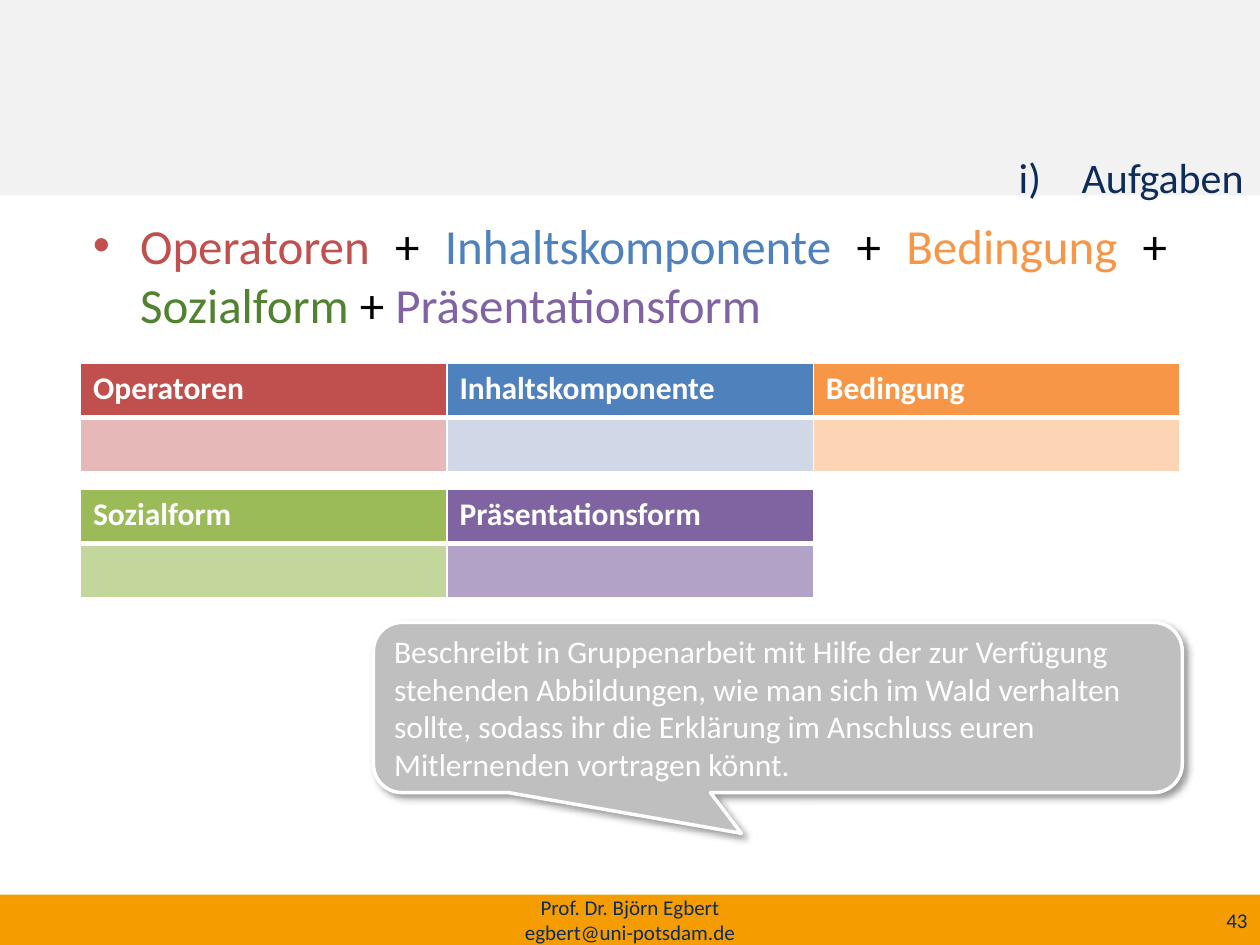
from dataclasses import dataclass

from lxml import etree
from pptx import Presentation
from pptx.dml.color import RGBColor
from pptx.enum import shapes, text
from pptx.oxml import ns
from pptx.util import Pt


@dataclass(frozen=True)
class Theme:
    font: str = "Calibri"
    navy: str = "0D2C5A"
    white: str = "FFFFFF"
    black: str = "000000"
    band: str = "F2F2F2"
    footer: str = "F59C00"
    callout: str = "BFBFBF"
    red: str = "C0504D"
    blue: str = "4F81BD"
    orange: str = "F79646"
    green: str = "9BBB59"
    dark_green: str = "51822F"
    purple: str = "8064A2"
    light_red: str = "E6B9B8"
    light_blue: str = "D0D8E8"
    light_orange: str = "FCD5B5"
    light_green: str = "C3D69B"
    light_purple: str = "B3A2C7"
    formula_size: int = 28
    title_size: int = 24
    text_size: int = 18
    footer_size: int = 12


THEME = Theme()
COLUMN_WIDTH = 209.4
ROW_HEIGHT = 31.2


def add_element(parent, tag, **attributes):
    element = etree.SubElement(parent, ns.qn(tag))
    for name, value in attributes.items():
        element.set(name, str(value))
    return element


def format_run(run, size, color, bold=False):
    run.font.name = THEME.font
    run.font.size = Pt(size)
    run.font.bold = bold
    run.font.color.rgb = RGBColor.from_string(color)


def fill_solid(item, color):
    item.fill.solid()
    item.fill.fore_color.rgb = RGBColor.from_string(color)


def add_text(slide, box, anchor=text.MSO_ANCHOR.TOP):
    frame = slide.shapes.add_textbox(*map(Pt, box)).text_frame
    frame.word_wrap = True
    frame.vertical_anchor = anchor
    return frame


def add_label(slide, box, words, alignment):
    paragraph = add_text(slide, box, text.MSO_ANCHOR.MIDDLE).paragraphs[0]
    paragraph.text = words
    paragraph.alignment = alignment
    for run in paragraph.runs:
        format_run(run, THEME.footer_size, THEME.navy)


def add_band(slide, box, color):
    shape = slide.shapes.add_shape(shapes.MSO_SHAPE.RECTANGLE, *map(Pt, box))
    shape.shadow.inherit = False
    fill_solid(shape, color)
    shape.line.fill.background()


def set_hanging_indent(paragraph, indent):
    properties = paragraph._p.get_or_add_pPr()
    properties.set("marL", str(Pt(indent)))
    properties.set("indent", str(-Pt(indent)))
    return properties


def add_title(slide, box, words):
    paragraph = add_text(slide, box).paragraphs[0]
    paragraph.text = words
    paragraph.alignment = text.PP_ALIGN.RIGHT
    properties = set_hanging_indent(paragraph, 36)
    add_element(properties, "a:buFont", typeface="+mj-lt")
    add_element(properties, "a:buAutoNum", type="alphaLcParenR", startAt=9)
    format_run(paragraph.runs[0], THEME.title_size, THEME.navy)


def add_formula(slide, box, terms):
    paragraph = add_text(slide, box).paragraphs[0]
    paragraph.alignment = text.PP_ALIGN.JUSTIFY
    properties = set_hanging_indent(paragraph, 27)
    add_element(properties, "a:buFont", typeface="Arial")
    add_element(properties, "a:buChar", char="•")
    for index, (term, color) in enumerate(terms):
        pieces = [(term, color)] if index == 0 else [(" + ", THEME.black), (term, color)]
        for words, piece_color in pieces:
            run = paragraph.add_run()
            run.text = words
            format_run(run, THEME.formula_size, piece_color)


def set_borders(cell, top, bottom):
    properties = cell._tc.get_or_add_tcPr()
    for side, width in (("L", 1), ("R", 1), ("T", top), ("B", bottom)):
        line = add_element(properties, f"a:ln{side}", w=Pt(width))
        add_element(add_element(line, "a:solidFill"), "a:srgbClr", val=THEME.white)


def add_component_table(slide, left, top, components):
    count = len(components)
    size = (COLUMN_WIDTH * count, ROW_HEIGHT * 2)
    table = slide.shapes.add_table(2, count, *map(Pt, (left, top, *size))).table
    for row in table.rows:
        row.height = Pt(ROW_HEIGHT)
    for index, (name, color, light_color) in enumerate(components):
        table.columns[index].width = Pt(COLUMN_WIDTH)
        header, body = table.cell(0, index), table.cell(1, index)
        set_borders(header, 1, 3)
        set_borders(body, 3, 1)
        fill_solid(header, color)
        fill_solid(body, light_color)
        header.text_frame.text = name
        format_run(header.text_frame.paragraphs[0].runs[0], THEME.text_size, THEME.white, True)


def add_callout(slide, box, words):
    shape = slide.shapes.add_shape(
        shapes.MSO_SHAPE.ROUNDED_RECTANGULAR_CALLOUT, *map(Pt, box))
    for index, value in enumerate((-0.045, 0.74, 0.167)):
        shape.adjustments[index] = value
    fill_solid(shape, THEME.callout)
    shape.line.color.rgb = RGBColor.from_string(THEME.white)
    shape.line.width = Pt(2)
    shape.shadow.inherit = False
    effects = shape._element.spPr.find(ns.qn("a:effectLst"))
    shadow = add_element(effects, "a:outerShdw", blurRad=Pt(4), dist=Pt(3),
                         dir=45 * 60000, algn="tl", rotWithShape=0)
    shadow_color = add_element(shadow, "a:srgbClr", val=THEME.black)
    add_element(shadow_color, "a:alpha", val=40000)
    frame = shape.text_frame
    frame.word_wrap = True
    frame.vertical_anchor = text.MSO_ANCHOR.MIDDLE
    frame.text = words
    frame.paragraphs[0].alignment = text.PP_ALIGN.LEFT
    format_run(frame.paragraphs[0].runs[0], THEME.text_size, THEME.white)


def add_footer(slide, box):
    left, top, width, height = box
    add_band(slide, box, THEME.footer)
    add_label(slide, (left + width - 172.8, top, 172.8, height), "43", text.PP_ALIGN.RIGHT)
    add_label(slide, (left + (width - 243.4) / 2, top, 243.4, height),
              "Prof. Dr. Björn Egbert\vegbert@uni-potsdam.de", text.PP_ALIGN.CENTER)


def add_task_slide(presentation):
    slide = presentation.slides.add_slide(presentation.slide_layouts[6])
    left = 46
    add_band(slide, (0, 0, 720, 111.6), THEME.band)
    add_footer(slide, (0, 511.2, 720, 28.8))
    add_formula(slide, (left, 119.5, 628, 80), [
        ("Operatoren", THEME.red),
        ("Inhaltskomponente", THEME.blue),
        ("Bedingung", THEME.orange),
        ("Sozialform", THEME.dark_green),
        ("Präsentationsform", THEME.purple),
    ])
    add_component_table(slide, left, 207.4, [
        ("Operatoren", THEME.red, THEME.light_red),
        ("Inhaltskomponente", THEME.blue, THEME.light_blue),
        ("Bedingung", THEME.orange, THEME.light_orange),
    ])
    add_component_table(slide, left, 279.4, [
        ("Sozialform", THEME.green, THEME.light_green),
        ("Präsentationsform", THEME.purple, THEME.light_purple),
    ])
    add_callout(slide, (213.4, 355.7, 462.2, 97.2),
                "Beschreibt in Gruppenarbeit mit Hilfe der zur Verfügung stehenden "
                "Abbildungen, wie man sich im Wald verhalten sollte, sodass ihr die "
                "Erklärung im Anschluss euren Mitlernenden vortragen könnt.")
    add_title(slide, (97.2, 82.8, 620.6, 45.4), "Aufgaben")


def main():
    presentation = Presentation()
    presentation.slide_width = Pt(720)
    presentation.slide_height = Pt(540)
    add_task_slide(presentation)
    presentation.save("out.pptx")


if __name__ == "__main__":
    main()
